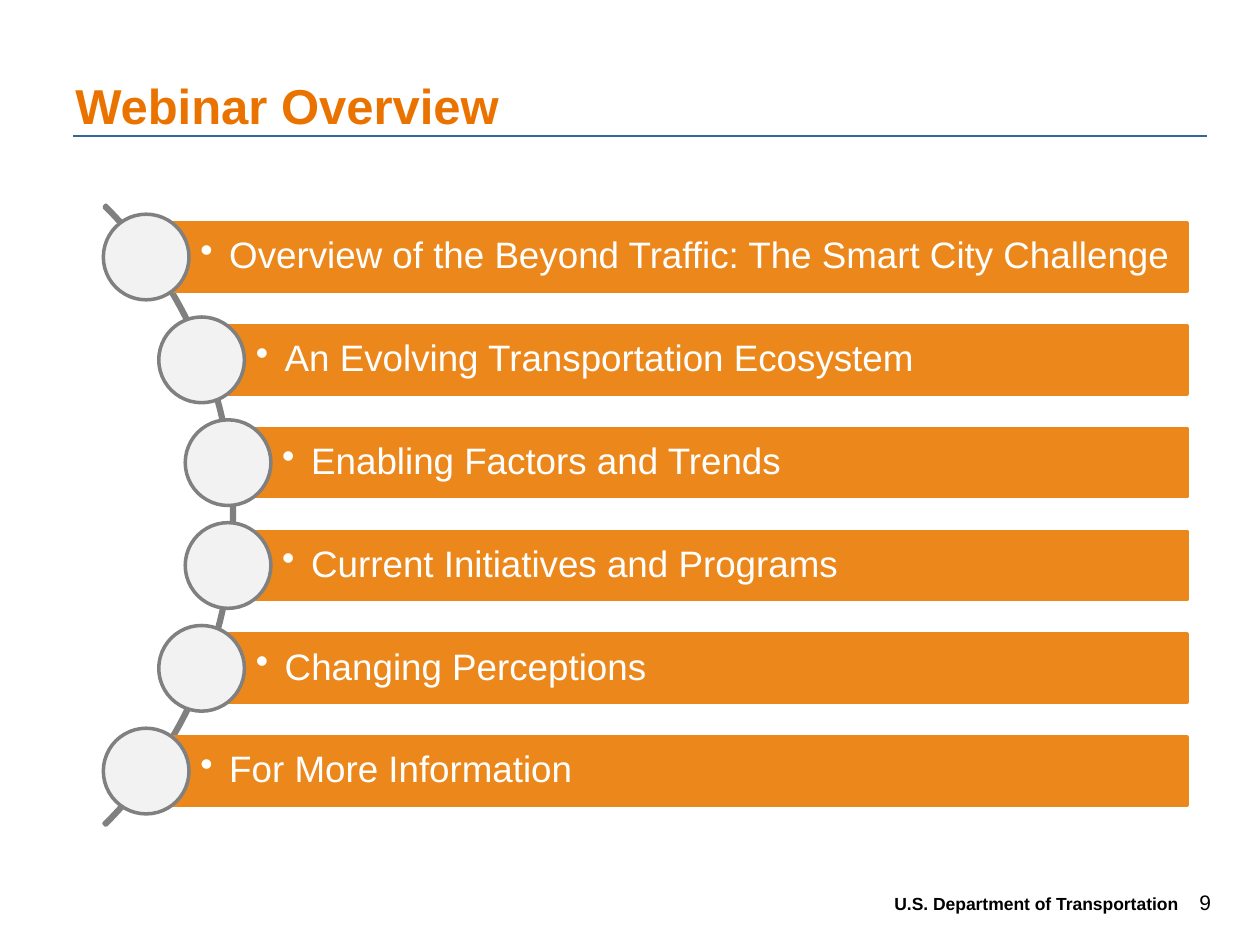
from typing import NamedTuple

from lxml import etree
from pptx import Presentation
from pptx.dml.color import RGBColor
from pptx.enum import shapes, text
from pptx.oxml import ns
from pptx.util import Inches, Pt

ORANGE = RGBColor(0xEC, 0x88, 0x1B)
TITLE_ORANGE = RGBColor(0xEA, 0x73, 0x00)
BLUE = RGBColor(0x33, 0x66, 0x99)
GRAY = RGBColor(0x80, 0x80, 0x80)
LIGHT = RGBColor(0xF2, 0xF2, 0xF2)
WHITE = RGBColor(0xFF, 0xFF, 0xFF)
BLACK = RGBColor(0, 0, 0)

FIRST_CENTER = 2.04
PITCH = 0.816
BAR_RIGHT = 9.42
BAR_HEIGHT = 0.54
DOT = 0.68
BULLET_INDENT = 0.23


class Topic(NamedTuple):
    left: float
    label: str


class Label(NamedTuple):
    box: tuple[float, float, float, float]
    words: str
    font: dict
    frame: dict
    para: dict


TOPICS = [
    Topic(1.16, "Overview of the Beyond Traffic: The Smart City Challenge"),
    Topic(1.6, "An Evolving Transportation Ecosystem"),
    Topic(1.81, "Enabling Factors and Trends"),
    Topic(1.81, "Current Initiatives and Programs"),
    Topic(1.6, "Changing Perceptions"),
    Topic(1.16, "For More Information"),
]

LABELS = [
    Label((0.5, 0.42, 9, 0.83), "Webinar Overview",
          {"size": Pt(28), "bold": True, "color": TITLE_ORANGE},
          {"vertical_anchor": text.MSO_ANCHOR.MIDDLE}, {}),
    Label((7, 7.08, 3, 0.23), "U.S. Department of Transportation",
          {"size": Pt(10), "bold": True, "color": BLACK},
          {}, {"line_spacing": Pt(9)}),
    Label((9.42, 7.01, 0.58, 0.3), "9",
          {"size": Pt(12), "color": BLACK}, {}, {}),
]


def set_all(target, values: dict) -> None:
    for name, value in values.items():
        setattr(target, name, value)


def write(p, words: str, font: dict) -> None:
    r = p.add_run()
    r.text = words
    r.font.name = "Arial"
    r.font.color.rgb = font["color"]
    set_all(r.font, {k: v for k, v in font.items() if k != "color"})


def add_label(s, label: Label) -> None:
    tf = s.shapes.add_textbox(*map(Inches, label.box)).text_frame
    set_all(tf, {"word_wrap": True, **label.frame})
    p = tf.paragraphs[0]
    set_all(p, label.para)
    write(p, label.words, label.font)


def add_outlined(s, kind, box: tuple, fill: RGBColor | None, line: RGBColor):
    sp = s.shapes.add_shape(kind, *map(Inches, box))
    sp.shadow.inherit = False
    if fill is None:
        sp.fill.background()
    else:
        sp.fill.solid()
        sp.fill.fore_color.rgb = fill
    sp.line.color.rgb = line
    sp.line.width = Pt(2)
    return sp


def add_bullet(p) -> None:
    pPr = p._p.get_or_add_pPr()
    pPr.set("marL", str(Inches(BULLET_INDENT)))
    pPr.set("indent", str(-Inches(BULLET_INDENT)))
    etree.SubElement(pPr, ns.qn("a:buChar")).set("char", "•")


def add_topic(s, topic: Topic, center: float) -> None:
    bar = add_outlined(
        s, shapes.MSO_SHAPE.RECTANGLE,
        (topic.left, center - BAR_HEIGHT / 2, BAR_RIGHT - topic.left, BAR_HEIGHT),
        ORANGE, ORANGE)
    tf = bar.text_frame
    set_all(tf, {
        "word_wrap": True,
        "vertical_anchor": text.MSO_ANCHOR.MIDDLE,
        "margin_left": Inches(0.43),
        "margin_right": Inches(0.06),
        "margin_top": Inches(0.06),
        "margin_bottom": Inches(0.06),
    })
    p = tf.paragraphs[0]
    add_bullet(p)
    set_all(p, {"alignment": text.PP_ALIGN.LEFT, "line_spacing": 0.9})
    write(p, topic.label, {"size": Pt(21), "color": WHITE})
    add_outlined(s, shapes.MSO_SHAPE.OVAL,
                 (topic.left - DOT / 2, center - DOT / 2, DOT, DOT), LIGHT, GRAY)


def add_rule(s) -> None:
    rule = s.shapes.add_connector(
        shapes.MSO_CONNECTOR.STRAIGHT,
        Inches(0.58), Inches(1.08), Inches(9.58), Inches(1.08))
    rule.line.color.rgb = BLUE
    rule.line.width = Pt(1.5)
    etree.SubElement(rule._element.spPr, ns.qn("a:effectLst"))


def main() -> None:
    prs = Presentation()
    prs.slide_width, prs.slide_height = Inches(10), Inches(7.5)
    s = prs.slides.add_slide(prs.slide_layouts[6])
    add_rule(s)
    for label in LABELS:
        add_label(s, label)
    arc = add_outlined(s, shapes.MSO_SHAPE.BLOCK_ARC,
                       (-5.1, 0.61, 6.96, 6.96), None, GRAY)
    for i, value in enumerate((189, 27, 0.003)):
        arc.adjustments[i] = value
    for i, topic in enumerate(TOPICS):
        add_topic(s, topic, FIRST_CENTER + i * PITCH)
    prs.save("out.pptx")


if __name__ == "__main__":
    main()
